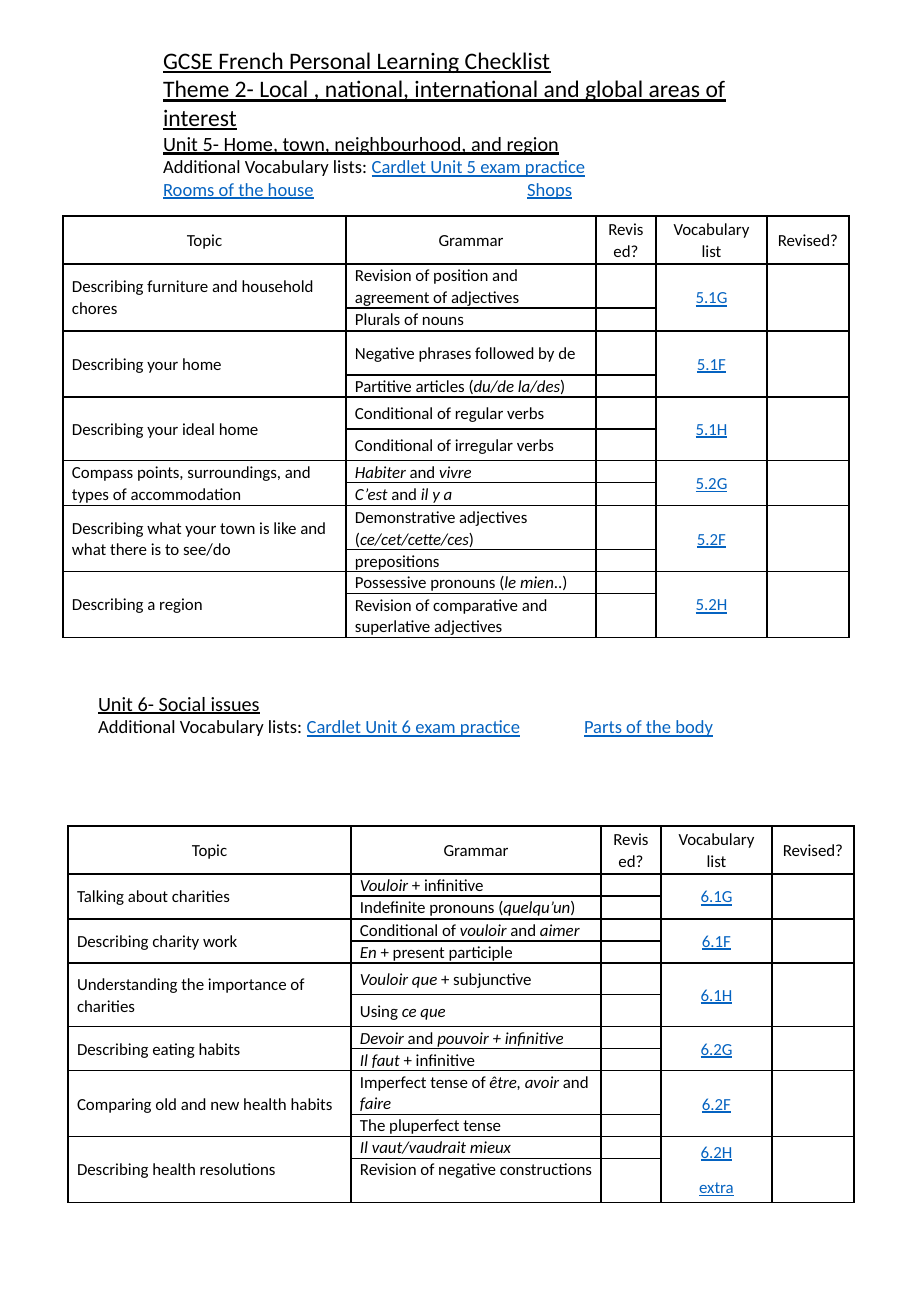
import pptx
import pptx.dml.color
import pptx.enum.text
import pptx.oxml
import pptx.oxml.ns
import pptx.util

BLACK = pptx.dml.color.RGBColor(0x00, 0x00, 0x00)
LINK_BLUE = pptx.dml.color.RGBColor(0x05, 0x63, 0xC1)
EMU_PER_PX = 7526
LEFT = pptx.enum.text.PP_ALIGN.LEFT
CENTER = pptx.enum.text.PP_ALIGN.CENTER
TOP = pptx.enum.text.MSO_ANCHOR.TOP
MIDDLE = pptx.enum.text.MSO_ANCHOR.MIDDLE
DRAWING = pptx.oxml.ns.nsdecls("a")

COLUMN_WIDTHS = [283, 250, 60, 111, 82]
HEADER_HEIGHT = 48
HEADERS = ["Topic", "Grammar", "Revised?", "Vocabulary list", "Revised?"]

# Headings: size, underline, tab stop, text with links between asterisks
UNIT_5_HEADING = [
    (14, True, None, "GCSE French Personal Learning Checklist"),
    (14, True, None, "Theme 2- Local , national, international and global areas of interest"),
    (12, True, None, "Unit 5- Home, town, neighbourhood, and region"),
    (11, False, None, "Additional Vocabulary lists: *Cardlet Unit 5 exam practice*"),
    (11, False, 364, "*Rooms of the house*\t*Shops*"),
]
UNIT_6_HEADING = [
    (12, True, None, "Unit 6- Social issues"),
    (11, False, 486, "Additional Vocabulary lists: *Cardlet Unit 6 exam practice*\t*Parts of the body*"),
]

# Topics: name, vocabulary list, two (row height, grammar with italics between asterisks)
UNIT_5_TOPICS = [
    ("Describing furniture and household chores", "*5.1G*",
     [(44, "Revision of position and agreement of adjectives"), (23, "Plurals of nouns")]),
    ("Describing your home", "*5.1F*",
     [(44, "Negative phrases followed by de"), (22, "Partitive articles (*du/de la/des*)")]),
    ("Describing your ideal home", "*5.1H*",
     [(32, "Conditional of regular verbs"), (32, "Conditional of irregular verbs")]),
    ("Compass points, surroundings, and types of accommodation", "*5.2G*",
     [(22, "*Habiter* and *vivre*"), (23, "*C’est *and *il y a*")]),
    ("Describing what your town is like and what there is to see/do", "*5.2F*",
     [(44, "Demonstrative adjectives (*ce/cet/cette/ces*)"), (22, "prepositions")]),
    ("Describing a region", "*5.2H*",
     [(22, "Possessive pronouns (*le mien*..)"),
      (44, "Revision of comparative and superlative adjectives")]),
]
UNIT_6_TOPICS = [
    ("Talking about charities", "*6.1G*",
     [(22, "*Vouloir* + infinitive"), (23, "Indefinite pronouns (*quelqu’un*)")]),
    ("Describing charity work", "*6.1F*",
     [(22, "Conditional of *vouloir* and *aimer*"), (22, "*En *+ present participle")]),
    ("Understanding the importance of charities", "*6.1H*",
     [(32, "*Vouloir que* + subjunctive"), (32, "Using *ce que*")]),
    ("Describing eating habits", "*6.2G*",
     [(22, "*Devoir *and* pouvoir + infinitive*"), (22, "*Il faut* + infinitive")]),
    ("Comparing old and new health habits", "*6.2F*",
     [(44, "Imperfect tense of *être, avoir* and *faire*"), (22, "The pluperfect tense")]),
    ("Describing health resolutions", "*6.2H*\n*extra*",
     [(22, "*Il vaut/vaudrait mieux*"), (44, "Revision of negative constructions")]),
]


def px(length):
    return pptx.util.Emu(length * EMU_PER_PX)


def apply(target, values):
    for name, value in values.items():
        setattr(target, name, value)


class Checklist:
    font = "Calibri"
    cell_size = 10
    cell_format = {"margin_left": px(9), "margin_right": px(9),
                   "margin_top": 0, "margin_bottom": 0}
    link = {"underline": True}
    italic = {"italic": True}

    def __init__(self, width, height):
        self.deck = pptx.Presentation()
        apply(self.deck, {"slide_width": px(width), "slide_height": px(height)})
        self.page = self.deck.slides.add_slide(self.deck.slide_layouts[5])

    def add_spans(self, para, text, size, underline=False, marked=None, marked_color=BLACK):
        """Add spans; the parts between asterisks take the marked format."""
        for index, part in enumerate(text.split("*")):
            if not part:
                continue
            span = para.add_run()
            span.text = part
            is_marked = index % 2 == 1
            apply(span.font, {"name": self.font, "size": pptx.util.Pt(size),
                              "underline": underline, **(marked if is_marked else {})})
            span.font.color.rgb = marked_color if is_marked else BLACK

    def fill_heading(self, box, bounds, lines, top_margin):
        left, top, width, height = map(px, bounds)
        apply(box, {"left": left, "top": top, "width": width, "height": height})
        apply(box.text_frame, {"word_wrap": True, "vertical_anchor": TOP,
                               "auto_size": pptx.enum.text.MSO_AUTO_SIZE.NONE,
                               "margin_left": px(12), "margin_right": px(12),
                               "margin_top": px(top_margin), "margin_bottom": px(6)})
        for index, (size, underline, tab, text) in enumerate(lines):
            frame = box.text_frame
            para = frame.add_paragraph() if index else frame.paragraphs[0]
            para.alignment = LEFT
            if tab:
                para._p.get_or_add_pPr().append(pptx.oxml.parse_xml(
                    f'<a:tabLst {DRAWING}><a:tab pos="{px(tab)}" algn="l"/></a:tabLst>'))
            self.add_spans(para, text, size, underline, self.link, LINK_BLUE)

    def title(self, bounds, lines, top_margin):
        self.fill_heading(self.page.shapes.title, bounds, lines, top_margin)

    def heading(self, bounds, lines, top_margin):
        box = self.page.shapes.add_textbox(0, 0, 0, 0)
        self.fill_heading(box, bounds, lines, top_margin)

    def cell(self, cell, text="", alignment=LEFT, anchor=MIDDLE, marked=None, color=BLACK):
        apply(cell, {**self.cell_format, "vertical_anchor": anchor})
        properties = cell._tc.get_or_add_tcPr()
        for side in "LRTB":
            properties.append(pptx.oxml.parse_xml(
                f'<a:ln{side} {DRAWING} w="12700"><a:solidFill>'
                f'<a:srgbClr val="{BLACK}"/></a:solidFill></a:ln{side}>'))
        cell.fill.background()
        for index, line in enumerate(text.split("\n")):
            frame = cell.text_frame
            para = frame.add_paragraph() if index else frame.paragraphs[0]
            apply(para, {"alignment": alignment, "line_spacing": 1.07,
                         "space_after": pptx.util.Pt(8)})
            self.add_spans(para, line, self.cell_size, marked=marked, marked_color=color)
            # Keeps blank cells as low as one line of text
            para._p.append(pptx.oxml.parse_xml(
                f'<a:endParaRPr {DRAWING} sz="{self.cell_size * 100}"/>'))

    def table(self, left, top, topics, last_anchor=MIDDLE):
        heights = [HEADER_HEIGHT] + [height for topic in topics for height, _ in topic[2]]
        table = self.page.shapes.add_table(
            len(heights), len(COLUMN_WIDTHS), px(left), px(top),
            px(sum(COLUMN_WIDTHS)), px(sum(heights))).table
        apply(table, {"first_row": False, "horz_banding": False})
        for column, width in zip(table.columns, COLUMN_WIDTHS):
            column.width = px(width)
        for row, height in zip(table.rows, heights):
            row.height = px(height)
        for column, header in enumerate(HEADERS):
            self.cell(table.cell(0, column), header, CENTER)

        for index, (topic, vocabulary, grammar) in enumerate(topics):
            first = 1 + 2 * index
            for column in (0, 3, 4):
                table.cell(first, column).merge(table.cell(first + 1, column))
            for row, (_, rule) in enumerate(grammar, first):
                is_first = row == first
                anchor = last_anchor if row == len(heights) - 1 else MIDDLE
                self.cell(table.cell(row, 0), topic if is_first else "")
                self.cell(table.cell(row, 1), rule, anchor=anchor, marked=self.italic)
                self.cell(table.cell(row, 2))
                self.cell(table.cell(row, 3), vocabulary if is_first else "", CENTER,
                          marked=self.link, color=LINK_BLUE)
                self.cell(table.cell(row, 4))


def main():
    checklist = Checklist(911, 1316)

    # Unit 5
    checklist.title((151, 29, 609, 227), UNIT_5_HEADING, 17)
    checklist.table(63, 216, UNIT_5_TOPICS)

    # Unit 6
    checklist.heading((86, 685, 673, 96), UNIT_6_HEADING, 6)
    checklist.table(68, 826, UNIT_6_TOPICS, last_anchor=TOP)

    checklist.deck.save("out.pptx")


if __name__ == "__main__":
    main()
